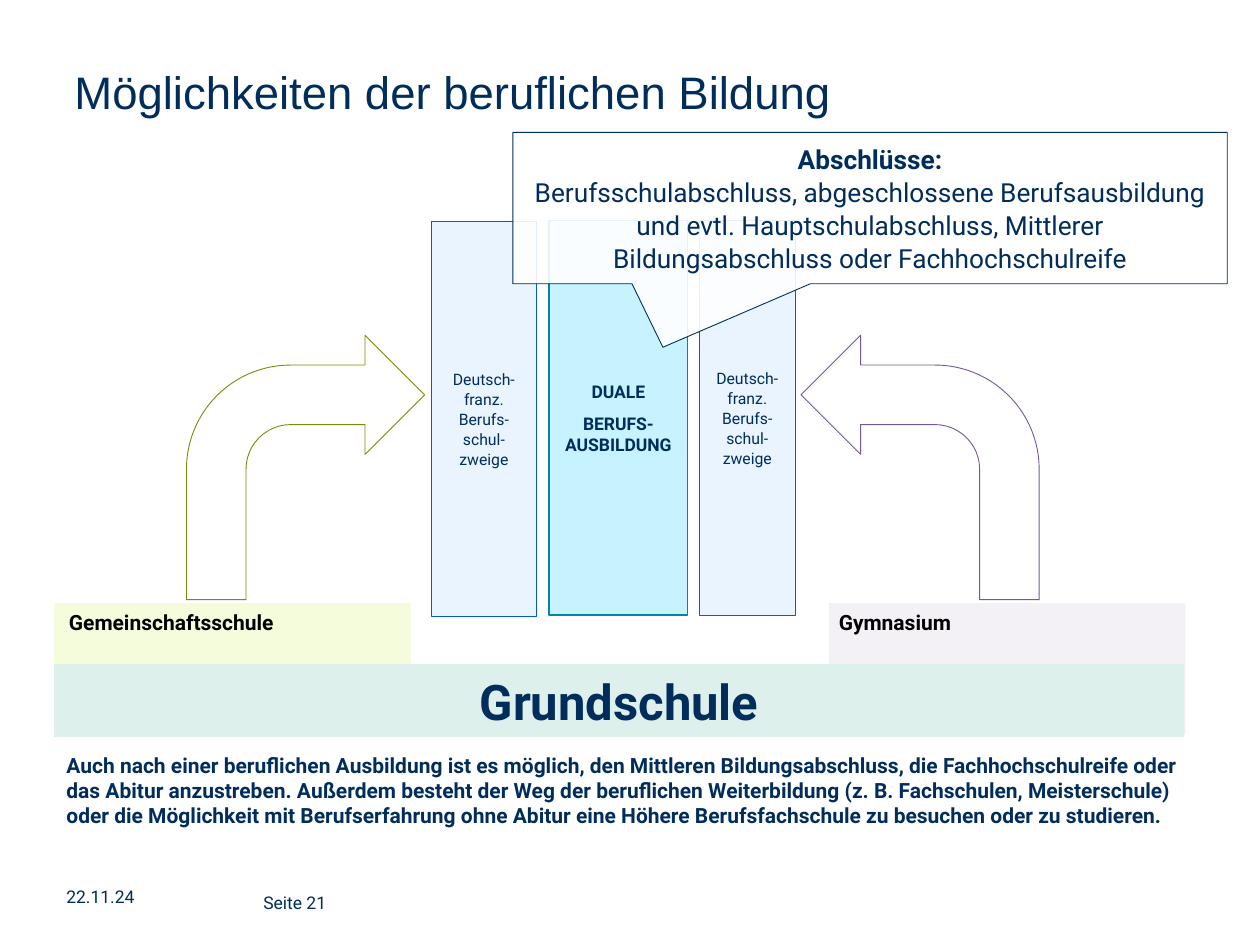
from pptx import Presentation
from pptx.dml.color import RGBColor as Rgb
from pptx.enum.shapes import MSO_SHAPE as Kind
from pptx.enum.text import MSO_ANCHOR as Anchor, PP_ALIGN as Align
from pptx.oxml.ns import qn
from pptx.util import Cm, Pt
from lxml.etree import SubElement

HUES = {
    "navy": "002D5B", "black": "000000", "white": "FFFFFF",
    "sky": "D5EAFF", "blue": "0061C4", "cyan": "C6F3FF", "teal": "0084A7",
    "lime": "EFFBC6", "olive": "718F0A", "lilac": "EBE7F1", "plum": "72589A",
    "mint": "DDF0EC",
}

deck = Presentation()
deck.slide_width, deck.slide_height = Cm(25.4), Cm(19.05)
slide = deck.slides.add_slide(deck.slide_layouts[6])


def draw(kind, place, fill, line=None, width=0.5, alpha=100):
    shape = slide.shapes.add_shape(kind, *map(Cm, place))
    shape.shadow.inherit = False
    shape.fill.solid()
    shape.fill.fore_color.rgb = Rgb.from_string(HUES[fill])
    if alpha < 100:
        tint = shape.fill._xPr.find(".//" + qn("a:srgbClr"))
        SubElement(tint, qn("a:alpha"), val=str(alpha * 1000))
    if line:
        shape.line.color.rgb = Rgb.from_string(HUES[line])
        shape.line.width = Pt(width)
    else:
        shape.line.fill.background()
    return shape


def write(text, shape=None, place=None, size=10, bold=False, hue="navy",
          font="Roboto", align=Align.LEFT, anchor=Anchor.TOP, lead=1.0,
          inset=True, gap=0):
    shape = shape or slide.shapes.add_textbox(*map(Cm, place))
    frame = shape.text_frame
    frame.word_wrap = True
    frame.vertical_anchor = anchor
    if not inset:
        frame.margin_left = frame.margin_right = 0
        frame.margin_top = frame.margin_bottom = 0
    for i, part in enumerate(text.split("\n")):
        para = frame.paragraphs[0] if i == 0 else frame.add_paragraph()
        para.alignment = align
        para.line_spacing = lead
        if i and gap:
            para.space_before = para.space_after = Pt(gap)
        run = para.add_run()
        run.text = part
        run.font.size, run.font.bold, run.font.name = Pt(size), bold, font
        run.font.color.rgb = Rgb.from_string(HUES[hue])
    return frame


mid = {"align": Align.CENTER, "anchor": Anchor.MIDDLE}

write("Seite 21", place=(5.31, 17.88, 3.2, 0.61), anchor=Anchor.MIDDLE, inset=False)

for left, top, wide in [(8.69, 4.47, 2.13), (14.1, 4.45, 1.93)]:
    side = draw(Kind.RECTANGLE, (left, top, wide, 7.95), "sky", "blue", alpha=50)
    write("Deutsch-franz. Berufs-schul-zweige", side, size=9, lead=1.05, **mid)

for name, left, start, fill in [
    ("Gemeinschaftsschule", 1.09, 1.14, "lime"),
    ("Gymnasium", 16.71, 16.66, "lilac"),
]:
    draw(Kind.RECTANGLE, (left, 12.16, 7.19, 2.64), fill, alpha=60)
    write(name, place=(start, 12.17, 6.68, 0.76), size=12, bold=True, hue="black")

base = draw(Kind.RECTANGLE, (1.09, 13.39, 22.78, 1.47), "mint")
write("Grundschule", base, size=28, bold=True, **mid)

dual = draw(Kind.RECTANGLE, (11.07, 4.45, 2.79, 7.95), "cyan", "teal", 0.75)
write("DUALE\nBERUFS-AUSBILDUNG", dual, bold=True, gap=6, **mid)

write(
    "Auch nach einer beruflichen Ausbildung ist es möglich, den Mittleren "
    "Bildungsabschluss, die Fachhochschulreife oder das Abitur anzustreben. "
    "Außerdem besteht der Weg der beruflichen Weiterbildung (z. B. Fachschulen, "
    "Meisterschule) oder die Möglichkeit mit Berufserfahrung ohne Abitur eine "
    "Höhere Berufsfachschule zu besuchen oder zu studieren.",
    place=(1.09, 15.04, 23.19, 2.31), size=12, bold=True,
)
write("22.11.24", place=(1.09, 17.73, 3.2, 0.61))

note = draw(Kind.RECTANGULAR_CALLOUT, (10.34, 2.67, 14.4, 3.05), "white", "navy", alpha=90)
note.adjustments[0], note.adjustments[1] = -0.29, 0.92
frame = write(
    "Abschlüsse:\n"
    "Berufsschulabschluss, abgeschlossene Berufsausbildung\n"
    "und evtl. Hauptschulabschluss, Mittlerer Bildungsabschluss oder Fachhochschulreife",
    note, size=15, lead=1.05, **mid,
)
frame.paragraphs[0].runs[0].font.bold = True

for left, line, flip in [(3.76, "olive", "0"), (16.15, "plum", "1")]:
    arrow = draw(Kind.BENT_ARROW, (left, 6.76, 4.8, 5.33), "white", line)
    arrow._element.spPr.find(qn("a:xfrm")).set("flipH", flip)

write("Möglichkeiten der beruflichen Bildung", place=(1.5, 1.47, 22.4, 2.26),
      size=26, font="Arial", lead=0.85, inset=False)

deck.save("out.pptx")
